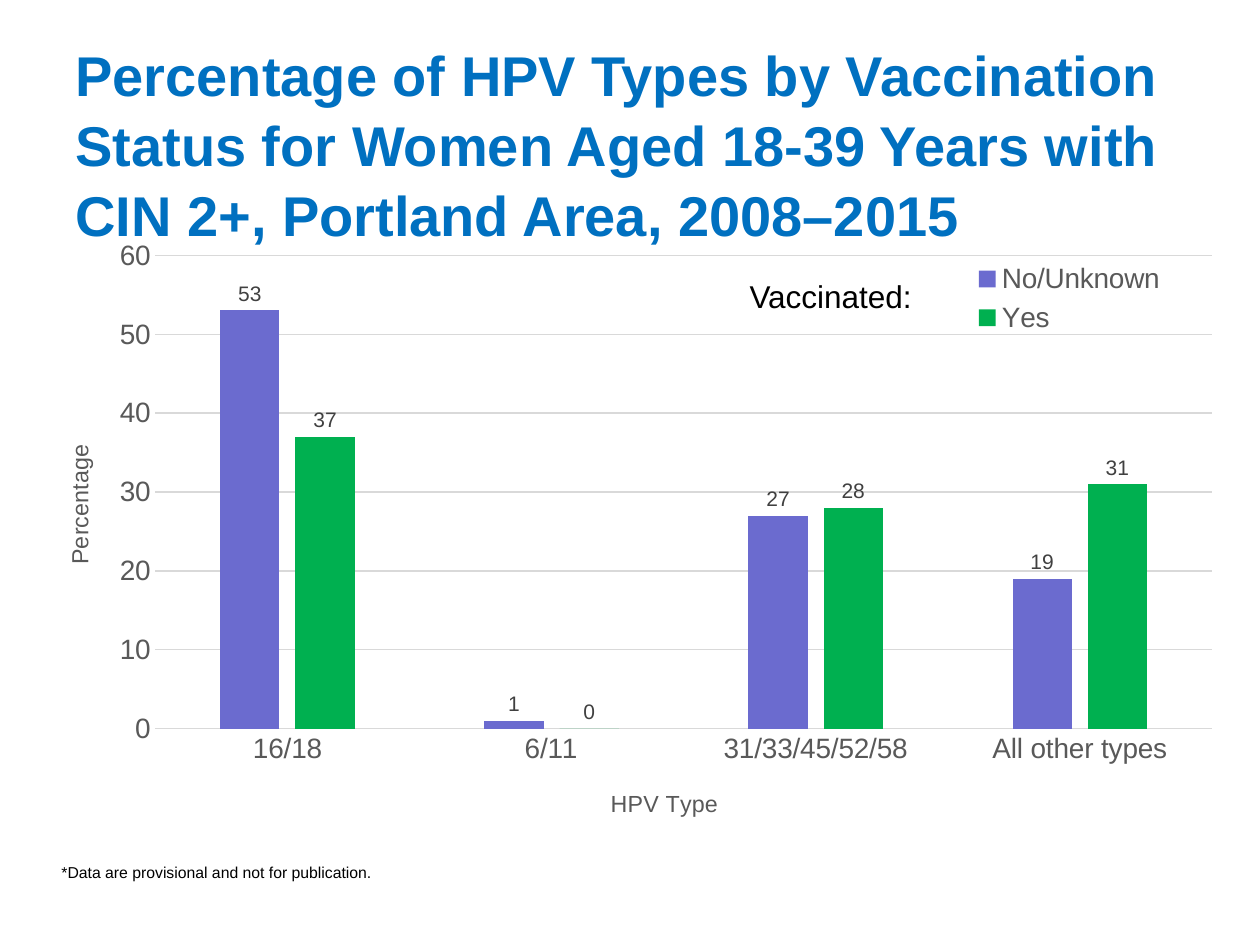
import dataclasses

import lxml.etree
import pptx
import pptx.chart.data
import pptx.dml.color
import pptx.enum.chart
import pptx.enum.text
import pptx.oxml
import pptx.oxml.ns
import pptx.util
from pptx.util import Cm


@dataclasses.dataclass(frozen=True)
class Theme:
    font: str = "Arial"
    title: str = "0070C0"
    text: str = "000000"
    axis: str = "595959"
    label: str = "404040"
    grid: str = "D9D9D9"
    title_pt: float = 32
    axis_pt: float = 16
    axis_title_pt: float = 13.3
    label_pt: float = 12
    base_pt: float = 10


@dataclasses.dataclass(frozen=True)
class Label:
    text: str
    box: tuple[float, float, float, float]
    size: float
    color: str
    bold: bool = False
    spacing: float = 1.0
    anchor: pptx.enum.text.MSO_ANCHOR = pptx.enum.text.MSO_ANCHOR.TOP


@dataclasses.dataclass(frozen=True)
class Series:
    name: str
    values: tuple[int, ...]
    color: str


THEME = Theme()
LABELS = (
    Label("Percentage of HPV Types by Vaccination Status for Women Aged 18-39 Years "
          "with CIN 2+, Portland Area, 2008–2015", (1.27, 0.76, 22.86, 4.24),
          THEME.title_pt, THEME.title, True, 1.04, pptx.enum.text.MSO_ANCHOR.MIDDLE),
    Label("Vaccinated:", (14.86, 5.46, 3.84, 1.02), 18, THEME.text),
    Label("*Data are provisional and not for publication.", (0.99, 17.27, 16.71, 0.64),
          9, THEME.text),
)
CATEGORIES = ("16/18", "6/11", "31/33/45/52/58", "All other types")
SERIES = (
    Series("No/Unknown", (53, 1, 27, 19), "6B6BCF"),
    Series("Yes", (37, 0, 28, 31), "00B050"),
)


def style(font, size: float, color: str, bold: bool = False) -> None:
    font.name, font.size, font.bold = THEME.font, pptx.util.Pt(size), bold
    font.color.rgb = pptx.dml.color.RGBColor.from_string(color)


def add_label(slide, label: Label) -> None:
    tf = slide.shapes.add_textbox(*map(Cm, label.box)).text_frame
    tf.word_wrap = True
    tf.vertical_anchor = label.anchor
    p = tf.paragraphs[0]
    p.line_spacing = label.spacing
    r = p.add_run()
    r.text = label.text
    style(r.font, label.size, label.color, label.bold)


def place(element, after: str, **settings: str | float) -> None:
    """Give a chart part a manual layout, placed after the named child."""
    qn = pptx.oxml.ns.qn
    for old in element.findall(qn("c:layout")):
        element.remove(old)
    layout = lxml.etree.Element(qn("c:layout"))
    manual = lxml.etree.SubElement(layout, qn("c:manualLayout"))
    for tag, value in settings.items():
        lxml.etree.SubElement(manual, qn(f"c:{tag}")).set("val", str(value))
    previous = element.find(qn(after)) if after else None
    if previous is None:
        element.insert(0, layout)
    else:
        previous.addnext(layout)


def style_axis(axis, title: str, x: float, y: float) -> None:
    style(axis.tick_labels.font, THEME.axis_pt, THEME.axis)
    axis.major_tick_mark = pptx.enum.chart.XL_TICK_MARK.NONE
    axis.minor_tick_mark = pptx.enum.chart.XL_TICK_MARK.NONE
    r = axis.axis_title.text_frame.paragraphs[0].add_run()
    r.text = title
    style(r.font, THEME.axis_title_pt, THEME.axis)
    place(axis.axis_title._element, "c:tx", xMode="edge", yMode="edge", x=x, y=y)


def style_line(line) -> None:
    line.color.rgb = pptx.dml.color.RGBColor.from_string(THEME.grid)
    line.width = pptx.util.Pt(0.75)


def style_series(plot_series, series: Series) -> None:
    plot_series.format.fill.solid()
    plot_series.format.fill.fore_color.rgb = pptx.dml.color.RGBColor.from_string(series.color)
    labels = plot_series.data_labels
    labels.show_value = True
    labels.number_format, labels.number_format_is_linked = "0", False
    labels.position = pptx.enum.chart.XL_LABEL_POSITION.OUTSIDE_END
    style(labels.font, THEME.label_pt, THEME.label)


def add_chart(slide) -> None:
    data = pptx.chart.data.CategoryChartData(number_format="0")
    data.categories = CATEGORIES
    for series in SERIES:
        data.add_series(series.name, series.values)
    chart = slide.shapes.add_chart(
        pptx.enum.chart.XL_CHART_TYPE.COLUMN_CLUSTERED,
        Cm(0.74), Cm(4.65), Cm(23.93), Cm(12.4), data).chart
    chart.has_title = False
    style(chart.font, THEME.base_pt, THEME.text)
    plot = chart.plots[0]
    plot.gap_width, plot.overlap, plot.vary_by_categories = 219, -27, False
    for plot_series, series in zip(plot.series, SERIES):
        style_series(plot_series, series)

    style_axis(chart.category_axis, "HPV Type", 0.48, 0.9)
    style_line(chart.category_axis.format.line)
    axis = chart.value_axis
    style_axis(axis, "Percentage", 0.02, 0.34)
    axis.minimum_scale, axis.maximum_scale, axis.major_unit = 0, 60, 10
    axis.tick_labels.number_format, axis.tick_labels.number_format_is_linked = "0", False
    axis.format.line.fill.background()
    style_line(axis.major_gridlines.format.line)

    chart.has_legend = True
    legend = chart.legend
    legend.position = pptx.enum.chart.XL_LEGEND_POSITION.CORNER
    legend.include_in_layout = False
    style(legend.font, THEME.axis_pt, THEME.axis)
    place(legend._element, "c:legendPos", xMode="edge", yMode="edge",
          x=0.78, y=0.04, w=0.18, h=0.14)
    plot_area = chart._chartSpace.chart.plotArea
    place(plot_area, "", layoutTarget="inner", xMode="edge", yMode="edge",
          x=0.1, y=0.04, w=0.89, h=0.77)


def main() -> None:
    prs = pptx.Presentation()
    prs.slide_width, prs.slide_height = Cm(25.4), Cm(19.05)
    slide = prs.slides.add_slide(prs.slide_layouts[6])
    add_chart(slide)
    for label in LABELS:
        add_label(slide, label)
    prs.save("out.pptx")


if __name__ == "__main__":
    main()
